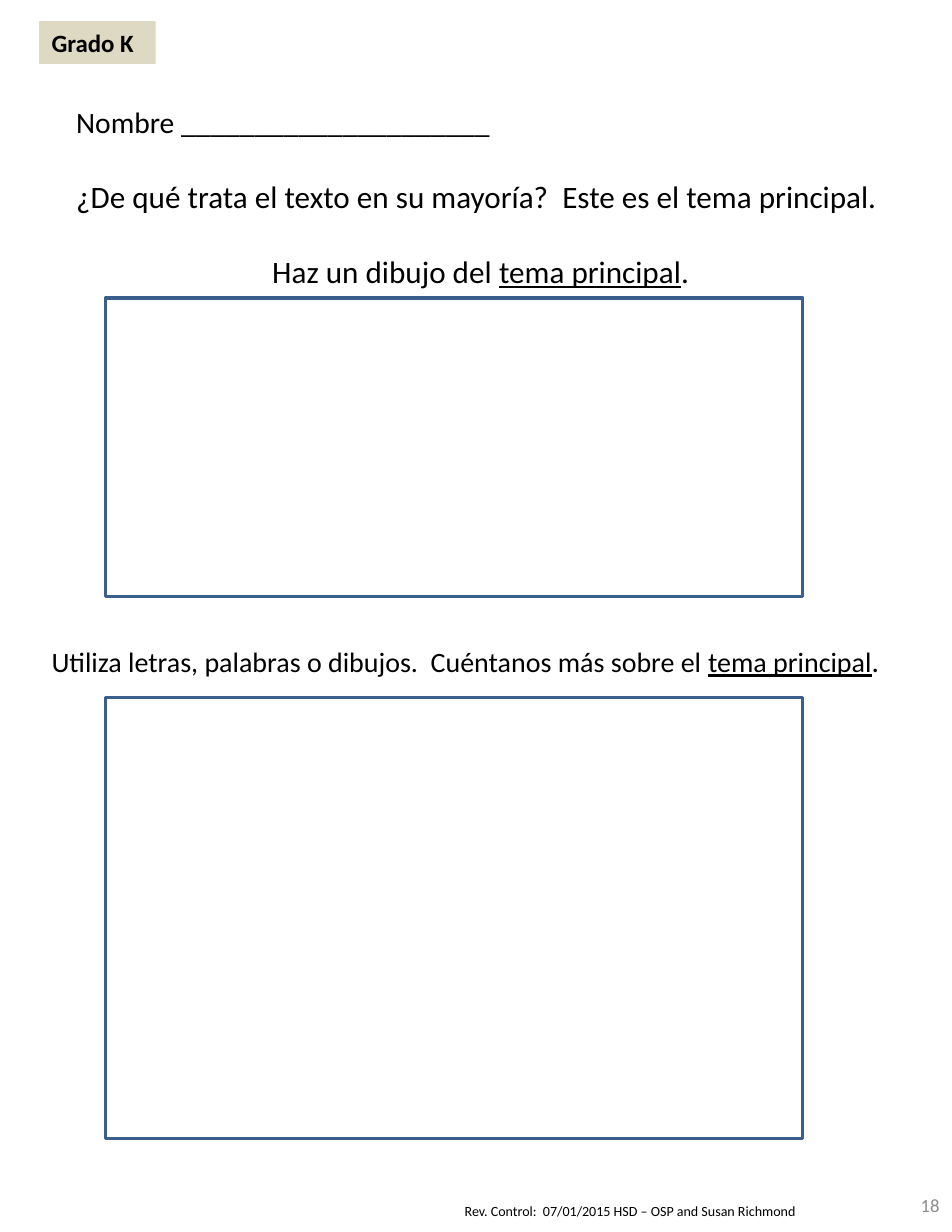
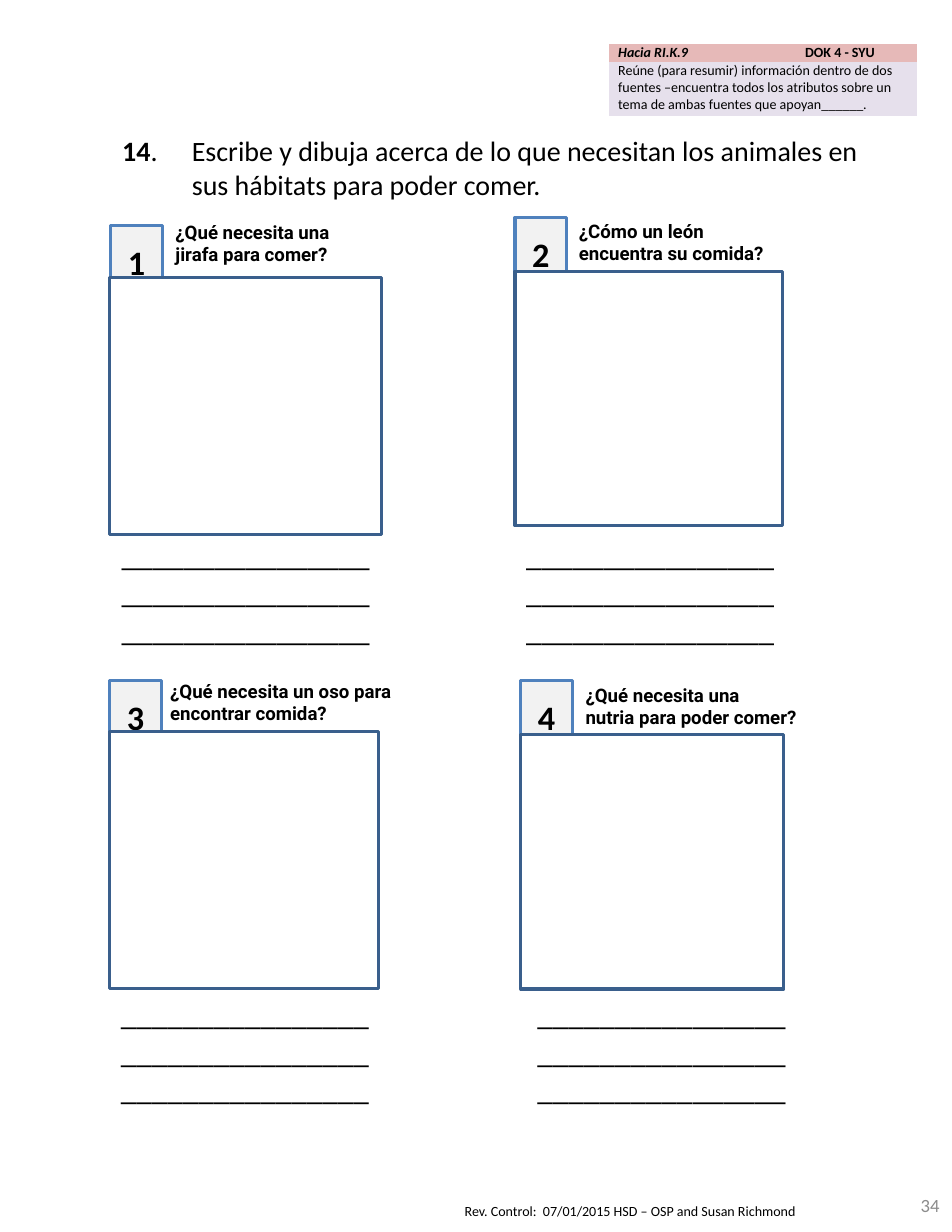
from lxml import etree
from pptx import Presentation
from pptx.dml.color import RGBColor
from pptx.enum.shapes import MSO_SHAPE
from pptx.enum.text import MSO_ANCHOR, MSO_AUTO_SIZE, PP_ALIGN
from pptx.oxml.ns import qn
from pptx.util import Cm, Pt

RECT = MSO_SHAPE.RECTANGLE
TOP, MIDDLE = MSO_ANCHOR.TOP, MSO_ANCHOR.MIDDLE
LEFT, CENTER, RIGHT = PP_ALIGN.LEFT, PP_ALIGN.CENTER, PP_ALIGN.RIGHT
FIXED = MSO_AUTO_SIZE.NONE

BLACK = RGBColor(0x00, 0x00, 0x00)
WHITE = RGBColor(0xFF, 0xFF, 0xFF)
GRAY = RGBColor(0x8C, 0x8C, 0x8C)
PALE = RGBColor(0xF2, 0xF2, 0xF2)
SAND = RGBColor(0xDD, 0xD9, 0xC3)
ROSE = RGBColor(0xE6, 0xB9, 0xB8)
LILAC = RGBColor(0xE6, 0xE0, 0xEC)
NAVY = RGBColor(0x3A, 0x5F, 0x8C)
BLUE = RGBColor(0x4F, 0x81, 0xBD)
BODY, HEAD = "Calibri", "Roboto"
WIDE, SLIM = (0.28, 0.15), (0.25, 0.13)
PLAIN = "{2D5ABB26-0587-4C30-8999-92F81FD0307C}"


def box(page, at, fill=None, line=None):
    shape = page.shapes.add_shape(RECT, *map(Cm, at))
    shape.shadow.inherit = False
    if fill is None:
        shape.fill.background()
    else:
        shape.fill.solid()
        shape.fill.fore_color.rgb = fill
    if line is None:
        shape.line.fill.background()
    else:
        shape.line.color.rgb = line
        shape.line.width = Pt(2)
    return shape


def write(frame, lines, size, bold=False, color=BLACK, font=BODY,
          align=LEFT, anchor=TOP, pad=SLIM):
    frame.word_wrap = True
    frame.vertical_anchor = anchor
    frame.margin_left = frame.margin_right = Cm(pad[0])
    frame.margin_top = frame.margin_bottom = Cm(pad[1])
    frame.text = "\n".join(parts[0] for parts in lines)
    for para, parts in zip(frame.paragraphs, lines):
        para.alignment = align
        for part in parts[1:]:
            para.add_run().text = part
        for run in para.runs:
            run.font.name = font
            run.font.size = Pt(size)
            run.font.bold = bold
            run.font.color.rgb = color
    return frame.paragraphs


deck = Presentation()
deck.slide_width, deck.slide_height = Cm(21.59), Cm(27.94)
draw = deck.slides.add_slide(deck.slide_layouts[6])
quiz = deck.slides.add_slide(deck.slide_layouts[5])

for page, num in ((draw, "18"), (quiz, "34")):
    foot = page.shapes.add_textbox(Cm(10.29), Cm(27.15), Cm(8.1), Cm(0.64))
    note = "Rev. Control:  07/01/2015 HSD – OSP and Susan Richmond"
    write(foot.text_frame, [[note]], 9)
    foot.text_frame.word_wrap = False
    mark = page.shapes.add_textbox(Cm(19.25), Cm(26.8), Cm(2.34), Cm(1.07))
    write(mark.text_frame, [[num]], 12, color=GRAY, align=RIGHT,
          anchor=MIDDLE, pad=WIDE)

intro = draw.shapes.add_textbox(Cm(1.45), Cm(2.21), Cm(18.9), Cm(4.5))
name, topic, task = write(intro.text_frame, [
    ["Nombre _____________________"],
    ["¿De qué trata el texto en su mayoría?  Este es el tema principal."],
    ["Haz un dibujo del ", "tema principal", "."],
], 20, pad=WIDE)
name.runs[0].font.size = Pt(19)
topic.space_before = task.space_before = Pt(24.4)
task.alignment = CENTER
task.runs[1].font.underline = True

grade = box(draw, (0.89, 0.48, 2.64, 0.97), SAND)
write(grade.text_frame, [["Grado K"]], 16, True, pad=WIDE)

tell = draw.shapes.add_textbox(Cm(0.89), Cm(14.43), Cm(19.43), Cm(1.09))
more = write(tell.text_frame, [[
    "Utiliza letras, palabras o dibujos.  Cuéntanos más sobre el ",
    "tema principal", "."]], 18, pad=WIDE)[0]
more.runs[1].font.underline = True
more.runs[2].font.size = Pt(19)

for top, high in ((6.76, 6.76), (15.82, 10.01)):
    box(draw, (2.39, top, 15.82, high), line=NAVY)

title = quiz.shapes.title
title.left, title.top, title.width, title.height = map(Cm, (2.49, 2.9, 17.25, 1.8))
title.text_frame.auto_size = FIXED
ask = write(title.text_frame, [[
    "14", ".\tEscribe y dibuja acerca de lo que necesitan los animales en "
    "sus hábitats para poder comer."]], 18, pad=(0.28, 0.13))[0]
ask.runs[0].font.bold = True
props = ask._p.get_or_add_pPr()
props.set("marL", str(Cm(1.58)))
props.set("indent", str(Cm(-1.58)))

grid = quiz.shapes.add_table(2, 1, Cm(13.82), Cm(0.99), Cm(6.98), Cm(1.64)).table
grid._tbl.tblPr.find(qn("a:tableStyleId")).text = PLAIN
grid.first_row = grid.horz_banding = False
rows = (
    (0.41, ROSE, MIDDLE, True, ["Hacia RI.K.9", "\tDOK 4 - SYU"]),
    (1.23, LILAC, TOP, False, [
        "Reúne (para resumir) información dentro de dos fuentes –encuentra "
        "todos los atributos sobre un tema de ambas fuentes que apoyan______."]),
)
for i, (high, fill, anchor, bold, parts) in enumerate(rows):
    grid.rows[i].height = Cm(high)
    cell = grid.cell(i, 0)
    cell.fill.solid()
    cell.fill.fore_color.rgb = fill
    write(cell.text_frame, [parts], 9, bold)
    cell.vertical_anchor = anchor
    cell.margin_left = cell.margin_right = Cm(0.2)
    cell.margin_top = cell.margin_bottom = 0
para = grid.cell(0, 0).text_frame.paragraphs[0]
para.runs[0].font.italic = True
tabs = etree.SubElement(para._p.get_or_add_pPr(), qn("a:tabLst"))
etree.SubElement(tabs, qn("a:tab"), pos=str(Cm(4.24)), algn="l")

cards = (
    ((2.51, 5.11), (2.49, 6.3, 6.17, 5.82), (3.73, 4.88, 4.93), (2.51, 12.01),
     [["¿Qué necesita una jirafa para comer?"]]),
    ((11.68, 4.93), (11.68, 6.15, 6.07, 5.77), (12.88, 4.85, 5.31), (11.68, 12.01),
     [["¿Cómo un león encuentra su comida?"]]),
    ((2.49, 15.44), (2.49, 16.59, 6.1, 5.82), (3.61, 15.29, 5.92), (2.49, 22.43),
     [["¿Qué necesita un oso para encontrar comida?"]]),
    ((11.81, 15.44), (11.81, 16.66, 5.97, 5.77), (13.03, 15.37, 5.74), (11.94, 22.43),
     [["¿Qué necesita una"], ["nutria para poder comer?"]]),
)
for num, (tag, area, spot, rule, lines) in enumerate(cards, 1):
    badge = box(quiz, (*tag, 1.17, 1.65), PALE, BLUE)
    write(badge.text_frame, [[str(num)]], 22, True, align=CENTER,
          anchor=MIDDLE, pad=(0.28, 0.13))
    box(quiz, area, WHITE, NAVY)
    label = quiz.shapes.add_textbox(*map(Cm, (*spot, 1.27)))
    write(label.text_frame, lines, 12, True, font=HEAD)
    blank = quiz.shapes.add_textbox(*map(Cm, (*rule, 6.35, 2.82)))
    write(blank.text_frame, [["_" * 48]], 20)

deck.save("out.pptx")
